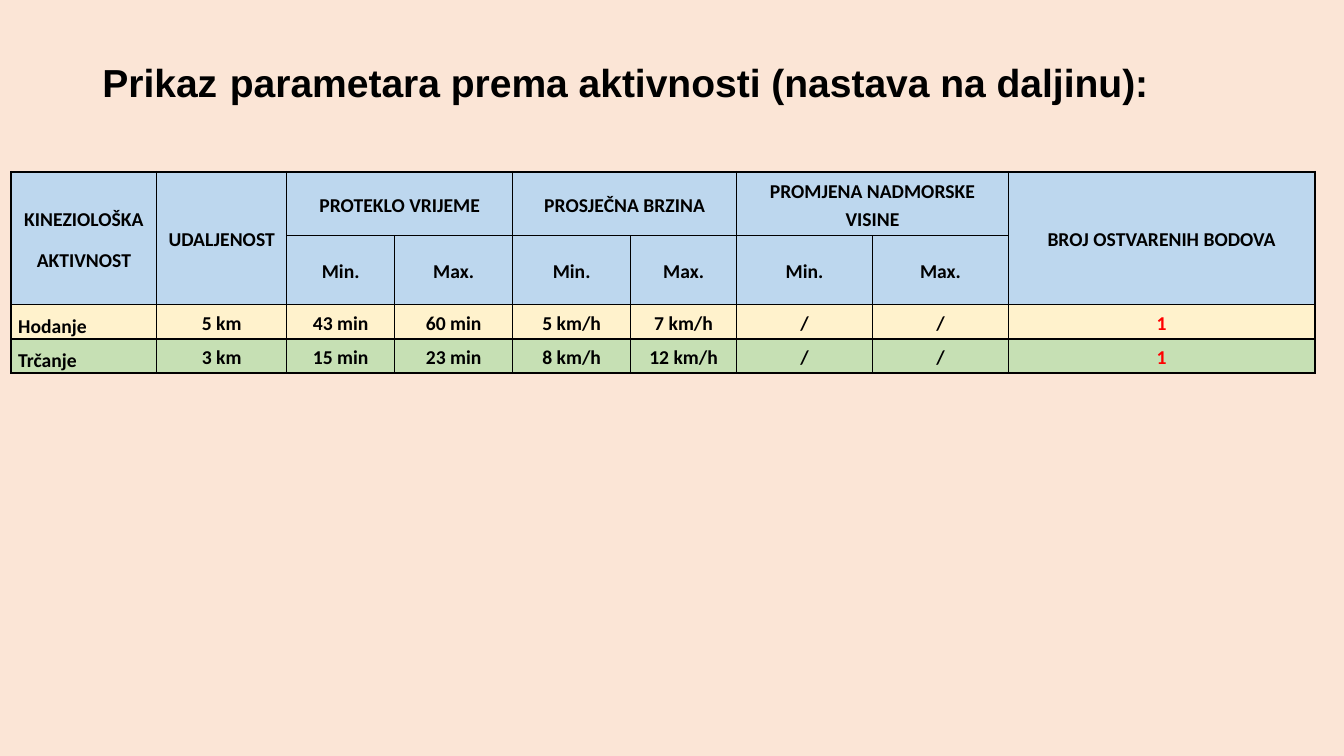
from lxml import etree
from pptx import Presentation
from pptx.dml.color import RGBColor
from pptx.enum.text import MSO_ANCHOR as Anchor, MSO_AUTO_SIZE as AutoSize, PP_ALIGN as Align
from pptx.oxml.ns import qn
from pptx.util import Pt

BLACK, RED, BLUE, YELLOW, GREEN = "000000", "FF0000", "BDD7EE", "FFF2CC", "C6E0B4"


def paint(fill, color):
    fill.solid()
    fill.fore_color.rgb = RGBColor.from_string(color)


def add_border(cell, side, width):
    """Draw one black cell edge; side is L, R, T or B and width is in points."""
    line = etree.SubElement(cell._tc.get_or_add_tcPr(), qn(f"a:ln{side}"), w=str(Pt(width)))
    solid = etree.SubElement(line, qn("a:solidFill"))
    etree.SubElement(solid, qn("a:srgbClr"), val=BLACK)


deck = Presentation()
deck.slide_width, deck.slide_height = Pt(960), Pt(540)
slide = deck.slides.add_slide(deck.slide_layouts[5])
paint(slide.background.fill, "FBE5D6")

# Title
title = slide.shapes.title
title_place = {"left": 66, "top": 28.8, "width": 828, "height": 104.4}
for name, value in title_place.items():
    setattr(title, name, Pt(value))
frame = title.text_frame
frame.auto_size = AutoSize.NONE
frame.vertical_anchor = Anchor.MIDDLE
para = frame.paragraphs[0]
para.alignment, para.line_spacing = Align.LEFT, 0.9
title_runs = [
    ("Prikaz", 27.9, True),
    (" ", 32.4, False),
    ("parametara prema aktivnosti (nastava na daljinu):", 27.9, True),
]
for text, size, bold in title_runs:
    span = para.add_run()
    span.text = text
    for name, value in {"name": "Arial", "size": Pt(size), "bold": bold}.items():
        setattr(span.font, name, value)
    paint(span.font.fill, BLACK)
para.add_line_break()
line_break = para._p[-1]
for parent, tag in ((line_break, "a:rPr"), (para._p, "a:endParaRPr")):
    props = etree.SubElement(parent, qn(tag), sz="3600")
    etree.SubElement(props, qn("a:latin"), typeface="Arial")

# Table
rows = [
    ["KINEZIOLOŠKA\nAKTIVNOST", "UDALJENOST", "PROTEKLO VRIJEME", "", "PROSJEČNA BRZINA", "",
     "PROMJENA NADMORSKE VISINE", "", "BROJ OSTVARENIH BODOVA"],
    ["", "", *["Min.", "Max."] * 3, ""],
    ["Hodanje", "5 km", "43 min", "60 min", "5 km/h", "7 km/h", "/", "/", "1"],
    ["Trčanje", "3 km", "15 min", "23 min", "8 km/h", "12 km/h", "/", "/", "1"],
]
row_fills = [BLUE, BLUE, YELLOW, GREEN]
row_heights = [45.8, 49.2, 24.4, 24.4]
column_widths = [104, 92.9, 77.1, 84.3, 84.3, 75.7, 97.1, 97.1, 218.9]
last_column = len(column_widths) - 1

table = slide.shapes.add_table(
    len(rows), len(column_widths), Pt(8), Pt(122.7),
    Pt(sum(column_widths)), Pt(sum(row_heights))).table
table.first_row = table.horz_banding = False
for column, width in zip(table.columns, column_widths):
    column.width = Pt(width)
for row, height in zip(table.rows, row_heights):
    row.height = Pt(height)

for r, texts in enumerate(rows):
    for c, text in enumerate(texts):
        cell = table.cell(r, c)
        is_activity = r > 1 and c == 0
        outer = {"L": c == 0, "R": c == last_column, "T": r == 0, "B": False}
        for side, is_outer in outer.items():
            add_border(cell, side, 1.5 if is_outer else 1)
        paint(cell.fill, row_fills[r])
        cell_format = {
            "margin_left": Pt(5), "margin_right": Pt(5), "margin_top": 0, "margin_bottom": 0,
            "vertical_anchor": Anchor.BOTTOM if is_activity else Anchor.MIDDLE,
        }
        for name, value in cell_format.items():
            setattr(cell, name, value)
        cell.text_frame.text = text
        for para in cell.text_frame.paragraphs:
            para.alignment = Align.LEFT if is_activity else Align.CENTER
            para.line_spacing, para.space_after = 1.15, Pt(10)
            for span in para.runs:
                for name, value in {"name": "Calibri", "size": Pt(14), "bold": True}.items():
                    setattr(span.font, name, value)
                paint(span.font.fill, RED if r > 1 and c == last_column else BLACK)

for c in (0, 1, last_column):
    table.cell(0, c).merge(table.cell(1, c))
for c in (2, 4, 6):
    table.cell(0, c).merge(table.cell(0, c + 1))

deck.save("out.pptx")
